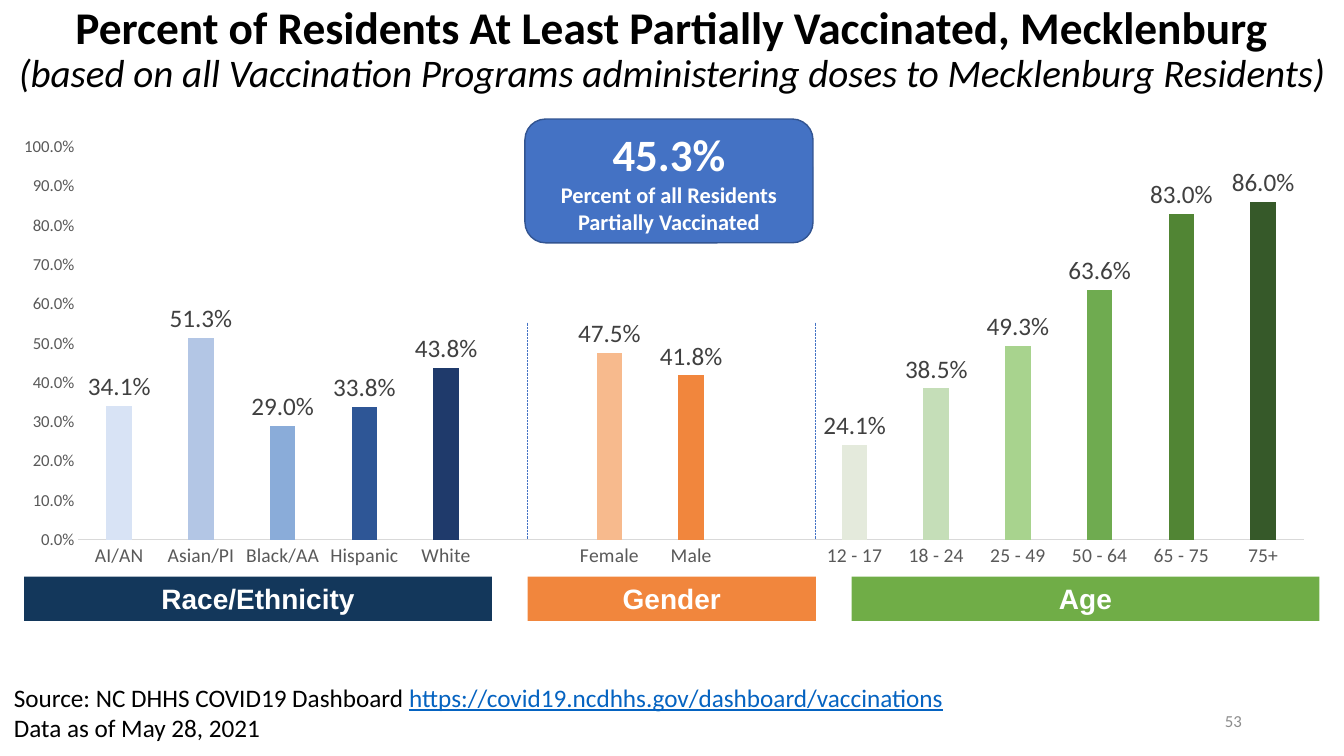
from lxml import etree
from pptx import Presentation
from pptx.chart.data import CategoryChartData
from pptx.dml.color import RGBColor
from pptx.enum import chart as ch, dml, shapes as sh, text as tx
from pptx.oxml import parse_xml
from pptx.oxml.ns import nsdecls, qn
from pptx.util import Cm, Pt

THEME = {
    "font": "Calibri", "band font": "Arial",
    "black": "000000", "white": "FFFFFF", "gray": "595959", "label": "404040",
    "axis": "D9D9D9", "page": "8C8C8C", "link": "0563C1",
    "blue": "4472C4", "edge": "325491",
    "title": 32.4, "sub": 27.9, "big": 32, "band": 20, "body": 18,
    "note": 16, "cat": 14, "small": 12,
}
TITLE = "Percent of Residents At Least Partially Vaccinated, Mecklenburg"
SUB = "(based on all Vaccination Programs administering doses to Mecklenburg Residents)"
SOURCE = "Source: NC DHHS COVID19 Dashboard "
LINK = "https://covid19.ncdhhs.gov/dashboard/vaccinations"
DATE = "Data as of May 28, 2021"
PAGE = "53"
BADGE = ("45.3%", "Percent of all Residents Partially Vaccinated")

# category, share, bar colour
BARS = [
    ("AI/AN", 0.341, "D8E3F5"), ("Asian/PI", 0.513, "B3C6E5"),
    ("Black/AA", 0.29, "8AACD9"), ("Hispanic", 0.338, "2E5696"),
    ("White", 0.438, "1F3A6B"), ("", None, None),
    ("Female", 0.475, "F7BA8D"), ("Male", 0.418, "F1863D"), ("", None, None),
    ("12 - 17", 0.241, "E4EADC"), ("18 - 24", 0.385, "C5DEB8"),
    ("25 - 49", 0.493, "A8D38E"), ("50 - 64", 0.636, "6FAB50"),
    ("65 - 75", 0.83, "518534"), ("75+", 0.86, "365929"),
]
# group, width in cm, colour
BANDS = [("Race/Ethnicity", 11.79, "13375B"), ("Gender", 7.26, "F1863D"),
         ("Age", 11.79, "70AD47")]
LEFT, GAP = 0.61, 0.9
PLOT = {"x": 0.04, "y": 0.059, "w": 0.949, "h": 0.831}


def rgb(code):
    return RGBColor.from_string(code)


def style(font, size, color, name=THEME["font"], bold=False):
    font.name, font.size, font.bold = name, Pt(size), bold
    font.color.rgb = rgb(color)
    return font


def write(para, words, *look, **more):
    run = para.add_run()
    run.text = words
    return style(run.font, *look, **more)


def text_box(slide, x, y, w, h, anchor):
    frame = slide.shapes.add_textbox(Cm(x), Cm(y), Cm(w), Cm(h)).text_frame
    frame.word_wrap = True
    frame.vertical_anchor = anchor
    return frame


def block(slide, kind, x, y, w, h, fill, anchor):
    box = slide.shapes.add_shape(kind, Cm(x), Cm(y), Cm(w), Cm(h))
    box.shadow.inherit = False
    box.fill.solid()
    box.fill.fore_color.rgb = rgb(fill)
    box.line.fill.background()
    box.text_frame.word_wrap = True
    box.text_frame.vertical_anchor = anchor
    box.text_frame.paragraphs[0].alignment = tx.PP_ALIGN.CENTER
    return box


def add_bars(slide):
    data = CategoryChartData(number_format="0.0%")
    data.categories = [name for name, _, _ in BARS]
    data.add_series("Series 1", [share for _, share, _ in BARS])
    chart = slide.shapes.add_chart(
        ch.XL_CHART_TYPE.COLUMN_CLUSTERED,
        Cm(LEFT), Cm(3), Cm(32.61), Cm(11.91), data).chart
    style(chart.font, 10, THEME["black"])
    chart.has_legend = chart.has_title = False

    cat, val = chart.category_axis, chart.value_axis
    for axis, size in ((cat, THEME["cat"]), (val, THEME["small"])):
        axis.major_tick_mark = axis.minor_tick_mark = ch.XL_TICK_MARK.NONE
        axis.has_major_gridlines = False
        style(axis.tick_labels.font, size, THEME["gray"])
    cat.format.line.color.rgb = rgb(THEME["axis"])
    cat.format.line.width = Pt(0.75)
    val.format.line.fill.background()
    val.minimum_scale, val.maximum_scale, val.major_unit = 0, 1, 0.1
    val.tick_labels.number_format = "0.0%"
    val.tick_labels.number_format_is_linked = False

    plot = chart.plots[0]
    plot.gap_width, plot.overlap, plot.vary_by_categories = 219, -27, False
    bars = plot.series[0]
    bars.format.fill.solid()
    bars.format.fill.fore_color.rgb = rgb(THEME["blue"])
    for i, (_, _, color) in enumerate(BARS):
        if color:
            fill = bars.points[i].format.fill
            fill.solid()
            fill.fore_color.rgb = rgb(color)
    tags = bars.data_labels
    tags.show_value = True
    tags.position = ch.XL_LABEL_POSITION.OUTSIDE_END
    tags.number_format, tags.number_format_is_linked = "0.0%", False
    style(tags.font, THEME["body"], THEME["label"])

    area = chart.plots[0]._element.getparent()
    for old in area.findall(qn("c:layout")):
        area.remove(old)
    modes = "".join(f'<c:{k}Mode val="edge"/>' for k in "xy")
    sizes = "".join(f'<c:{k} val="{v}"/>' for k, v in PLOT.items())
    area.insert(0, parse_xml(
        f'<c:layout {nsdecls("c")}><c:manualLayout>'
        f'<c:layoutTarget val="inner"/>{modes}{sizes}'
        '</c:manualLayout></c:layout>'))


def add_title(slide):
    frame = text_box(slide, 0, 0, 33.87, 3.68, tx.MSO_ANCHOR.TOP)
    para = frame.paragraphs[0]
    para.alignment, para.line_spacing = tx.PP_ALIGN.CENTER, 0.9
    write(para, TITLE, THEME["title"], THEME["black"], bold=True)
    para.add_line_break()
    write(para, SUB, THEME["sub"], THEME["black"]).italic = True


def add_foot(slide):
    para = text_box(slide, 23.93, 17.65, 7.62, 1.02,
                    tx.MSO_ANCHOR.MIDDLE).paragraphs[0]
    para.alignment = tx.PP_ALIGN.RIGHT
    write(para, PAGE, THEME["small"], THEME["page"])
    frame = text_box(slide, 0.1, 17.07, 26.21, 1.8, tx.MSO_ANCHOR.TOP)
    para = frame.paragraphs[0]
    write(para, SOURCE, THEME["body"], THEME["black"])
    write(para, LINK, THEME["body"], THEME["link"]).underline = True
    write(frame.add_paragraph(), DATE, THEME["body"], THEME["black"])


def add_rule(slide, x):
    """Dotted divider between two groups of bars."""
    rule = slide.shapes.add_connector(
        sh.MSO_CONNECTOR.STRAIGHT, Cm(x), Cm(8.13), Cm(x), Cm(13.59))
    rule.line.color.rgb = rgb(THEME["blue"])
    rule.line.width = Pt(0.5)
    rule.line.dash_style = dml.MSO_LINE.ROUND_DOT
    etree.SubElement(rule._element.spPr, qn("a:effectLst"))


def add_bands(slide):
    x = LEFT
    for name, wide, color in BANDS:
        box = block(slide, sh.MSO_SHAPE.RECTANGLE, x, 14.53, wide, 1.12,
                    color, tx.MSO_ANCHOR.TOP)
        write(box.text_frame.paragraphs[0], name, THEME["band"],
              THEME["white"], name=THEME["band font"], bold=True)
        if name == "Gender":
            add_rule(slide, x)
            add_rule(slide, x + wide)
        x += wide + GAP


def add_badge(slide):
    box = block(slide, sh.MSO_SHAPE.ROUNDED_RECTANGLE, 13.23, 3, 7.26, 3.12,
                THEME["blue"], tx.MSO_ANCHOR.MIDDLE)
    box.line.color.rgb = rgb(THEME["edge"])
    box.line.width = Pt(1)
    frame = box.text_frame
    write(frame.paragraphs[0], BADGE[0], THEME["big"], THEME["white"], bold=True)
    para = frame.add_paragraph()
    para.alignment = tx.PP_ALIGN.CENTER
    write(para, BADGE[1], THEME["note"], THEME["white"], bold=True)


def main():
    deck = Presentation()
    deck.slide_width, deck.slide_height = Cm(33.87), Cm(19.05)
    slide = deck.slides.add_slide(deck.slide_layouts[6])
    for step in (add_bars, add_title, add_foot, add_bands, add_badge):
        step(slide)
    deck.save("out.pptx")


if __name__ == "__main__":
    main()
